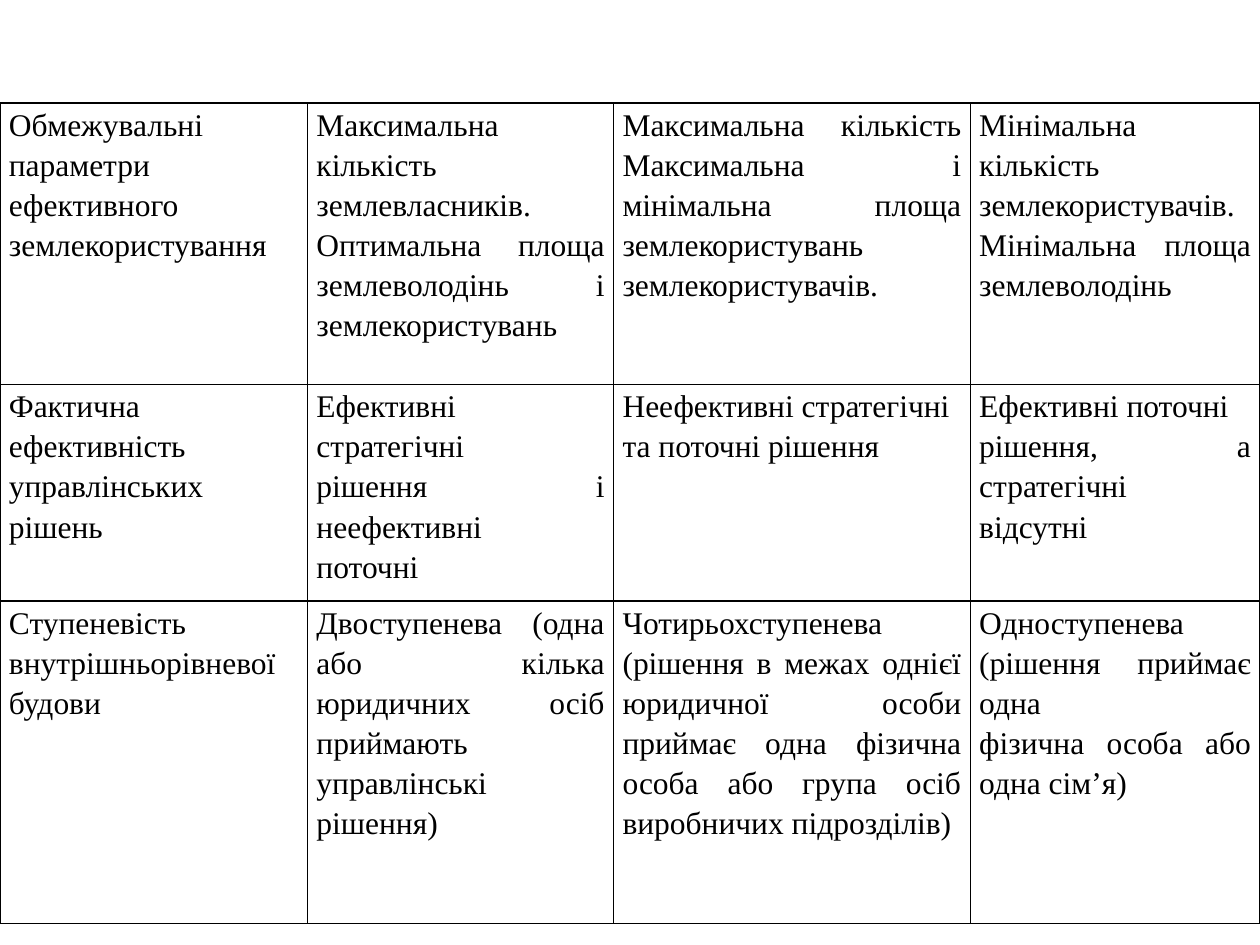
from lxml import etree
from pptx import Presentation
from pptx.dml.color import RGBColor
from pptx.enum.text import PP_ALIGN
from pptx.oxml.ns import qn
from pptx.util import Cm, Pt

JUSTIFY = PP_ALIGN.JUSTIFY
BLACK = RGBColor(0x00, 0x00, 0x00)

COLUMN_WIDTHS = [6.2, 6.17, 7.19, 5.84]
ROW_HEIGHTS = [5.67, 4.37, 6.5]
CELL_FORMAT = {
    "margin_left": Cm(0.18),
    "margin_right": Cm(0.18),
    "margin_top": Cm(0),
    "margin_bottom": Cm(0),
}
PARAGRAPH_FORMAT = {"alignment": JUSTIFY, "line_spacing": 1.15}
FONT_FORMAT = {"name": "Times New Roman", "size": Pt(18)}

MANAGEMENT_ROWS = [
    [
        ["Обмежувальні параметри ефективного землекористування"],
        ["Максимальна кількість землевласників. Оптимальна площа землеволодінь і землекористувань"],
        ["Максимальна кількість Максимальна і мінімальна площа землекористувань землекористувачів."],
        ["Мінімальна кількість землекористувачів. Мінімальна площа землеволодінь"],
    ],
    [
        ["Фактична ефективність", "управлінських рішень"],
        ["Ефективні стратегічні", "рішення і неефективні", "поточні"],
        ["Неефективні стратегічні", "та поточні рішення"],
        ["Ефективні поточні", "рішення, а стратегічні", "відсутні"],
    ],
    [
        ["Ступеневість внутрішньорівневої будови"],
        ["Двоступенева (одна або кілька юридичних осіб приймають управлінські рішення)"],
        ["Чотирьохступенева (рішення в межах однієї юридичної особи приймає одна фізична "
         "особа або група осіб виробничих підрозділів)"],
        ["Одноступенева", "(рішення приймає одна", "фізична особа або одна сім’я)"],
    ],
]


def apply_format(target, values):
    for name, value in values.items():
        setattr(target, name, value)


def add_borders(cell):
    properties = cell._tc.get_or_add_tcPr()
    for side in ("a:lnL", "a:lnR", "a:lnT", "a:lnB"):
        line = etree.SubElement(properties, qn(side), w=str(Pt(1)))
        fill = etree.SubElement(line, qn("a:solidFill"))
        etree.SubElement(fill, qn("a:srgbClr"), val=str(BLACK))


presentation = Presentation()
presentation.slide_width = Cm(25.4)
presentation.slide_height = Cm(19.05)
slide = presentation.slides.add_slide(presentation.slide_layouts[6])

table = slide.shapes.add_table(
    len(ROW_HEIGHTS), len(COLUMN_WIDTHS),
    Cm(0), Cm(2.08), Cm(sum(COLUMN_WIDTHS)), Cm(sum(ROW_HEIGHTS)),
).table
apply_format(table, {"first_row": False, "horz_banding": False})

for column, width in zip(table.columns, COLUMN_WIDTHS):
    column.width = Cm(width)

for row, height, row_texts in zip(table.rows, ROW_HEIGHTS, MANAGEMENT_ROWS):
    row.height = Cm(height)
    for cell, lines in zip(row.cells, row_texts):
        apply_format(cell, CELL_FORMAT)
        add_borders(cell)
        cell.fill.background()
        cell.text = "\n".join(lines)
        for paragraph in cell.text_frame.paragraphs:
            apply_format(paragraph, PARAGRAPH_FORMAT)
            apply_format(paragraph.font, FONT_FORMAT)
            paragraph.font.color.rgb = BLACK

presentation.save("out.pptx")
